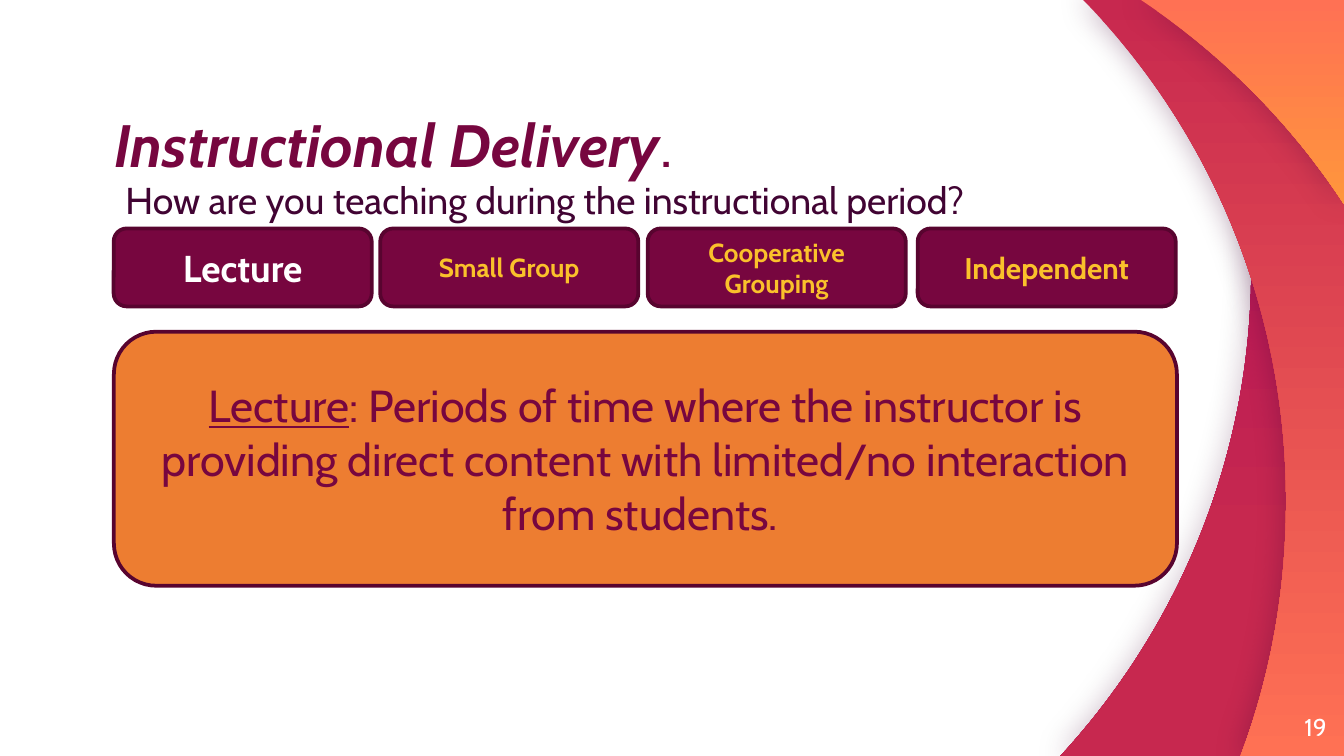
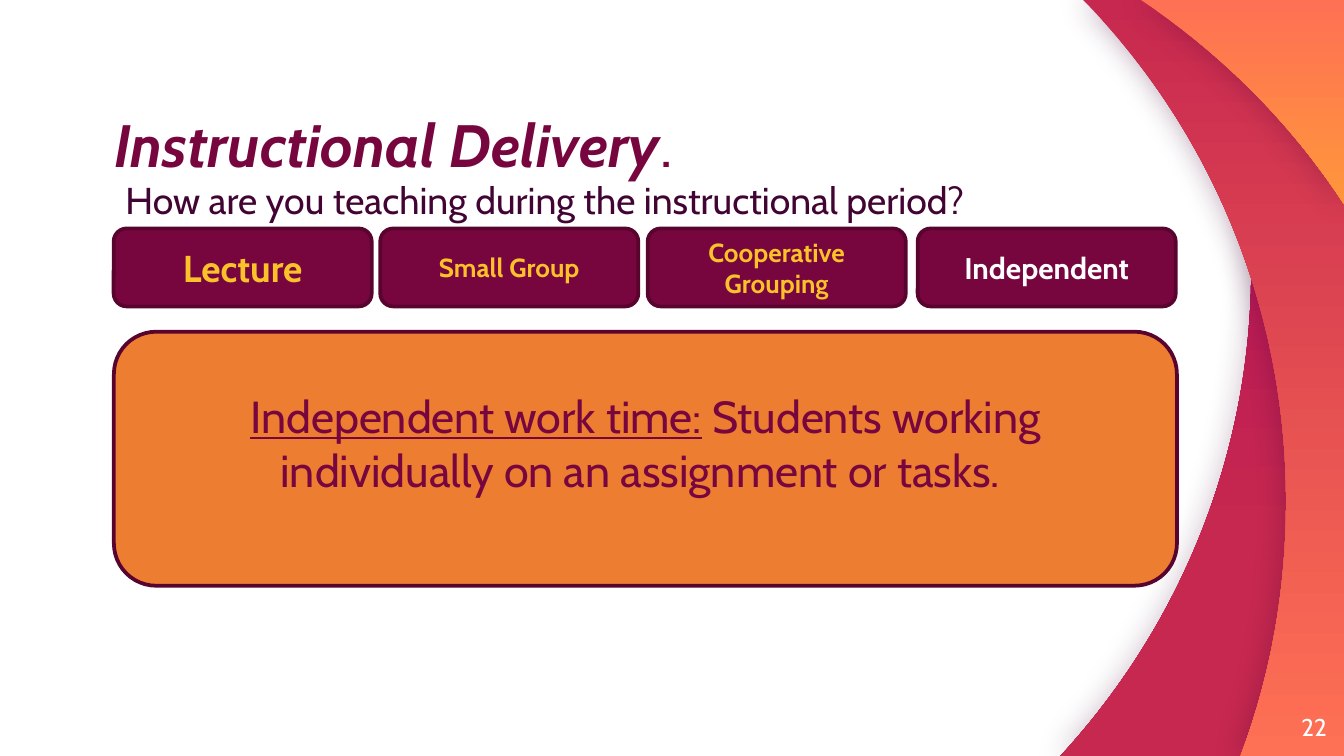
import lxml.etree
import pptx
import pptx.dml.color
import pptx.enum.shapes
import pptx.enum.text
import pptx.oxml.ns
import pptx.util

Pt = pptx.util.Pt
qn = pptx.oxml.ns.qn
ALIGN = pptx.enum.text.PP_ALIGN
ANCHOR = pptx.enum.text.MSO_ANCHOR

THEME = {
    "font": "Cabin",
    "wine": "77063F",
    "outline": "58042F",
    "ink": "410433",
    "gold": "FAC12B",
    "white": "FFFFFF",
    "orange": "ED7D31",
    "title_size": 32,
    "question_size": 20,
    "definition_size": 24,
    "number_size": 13,
    "outline_width": 2,
}

# Content
TITLE = ("Instructional Delivery", ". ")
QUESTION = "How are you teaching during the instructional period?"
# Each method: name, type size, left edge of its button
METHODS = [
    ("Lecture", 20, 60.9),
    ("Small Group", 14, 203.7),
    ("Cooperative Grouping", 14, 347),
    ("Independent", 16, 491.6),
]
PAGES = [
    {
        "number": "19",
        "active": "Lecture",
        "term": "Lecture",
        "meaning": ": Periods of time where the instructor is providing direct content "
                   "with limited/no interaction from students. ",
        "room_below": 3.6,
    },
    {
        "number": "22",
        "active": "Independent",
        "term": "Independent work time:",
        "meaning": " Students working individually on an assignment or tasks. ",
        "room_below": 20.6,
    },
]

# Layout, in points
WIDTH, HEIGHT = 720, 405
LEFT = 61.2
TEXT_WIDTH = 548
BUTTON_TOP, BUTTON_WIDTH, BUTTON_HEIGHT = 122.4, 138.24, 41.76
DEFINITION_AREA = (61, 177.7, 569.5, 136.08)

# Each band: start, curves (two control points and an end), gradient stops, shadow opacity
BANDS = [
    ((642.2, 0),
     [((661, 46), (670.3, 94.3), (670.3, 144)),
      ((670.3, 244.8), (631.5, 336.2), (568.1, HEIGHT))],
     [(0, "AC0C5C"), (0.72, "C7284F")], 25),
    ((580.3, 0),
     [((648, 69.1), (689, 164.2), (689, 268.6)),
      ((689, 315.4), (681.1, 361.4), (664.6, HEIGHT))],
     [(0, "C7284F"), (1, "FF7154")], 35),
    ((611.3, 0),
     [((654.5, 28.8), (691.9, 66.2), (WIDTH, 109.4))],
     [(0, "FF7154"), (1, "FF963C")], 30),
]


def colour(value):
    return pptx.dml.color.RGBColor.from_string(value)


def bend(shape, count):
    """Turn the first 3 * count straight segments of a freeform into cubic curves."""
    lines = list(shape._element.spPr.iter(qn("a:lnTo")))
    for first in range(0, 3 * count, 3):
        curve = lxml.etree.Element(qn("a:cubicBezTo"))
        lines[first].addprevious(curve)
        for line in lines[first:first + 3]:
            curve.append(line[0])
            line.getparent().remove(line)


def add_glow_shadow(shape, opacity):
    """Blurred shadow with no offset."""
    shape.shadow.inherit = False
    effects = shape._element.spPr.find(qn("a:effectLst"))
    shadow = lxml.etree.SubElement(effects, qn("a:outerShdw"), blurRad=str(Pt(16.9)),
                                   dist="0", dir="0", algn="ctr", rotWithShape="0")
    tint = lxml.etree.SubElement(shadow, qn("a:srgbClr"), val=THEME["ink"])
    lxml.etree.SubElement(tint, qn("a:alpha"), val=str(opacity * 1000))


def add_band(page, start, curves, stops, opacity):
    points = [point for curve in curves for point in curve]
    if points[-1][0] < WIDTH:
        points.append((WIDTH, HEIGHT))
    points.append((WIDTH, 0))
    builder = page.shapes.build_freeform(Pt(start[0]), Pt(start[1]))
    builder.add_line_segments([(Pt(x), Pt(y)) for x, y in points], close=True)
    band = builder.convert_to_shape()
    bend(band, len(curves))
    band.fill.gradient()
    band.fill.gradient_angle = 270
    for stop, (place, value) in zip(band.fill.gradient_stops, stops):
        stop.position = place
        stop.color.rgb = colour(value)
    band.line.fill.background()
    add_glow_shadow(band, opacity)


def write(shape, spans, frame_format, para_format):
    """Fill a shape with one paragraph; each span is text, size, colour, font format."""
    frame = shape.text_frame
    frame.word_wrap = True
    for name, value in frame_format.items():
        setattr(frame, name, value)
    para = frame.paragraphs[0]
    for name, value in para_format.items():
        setattr(para, name, value)
    for text, size, ink, font_format in spans:
        span = para.add_run()
        span.text = text
        span.font.color.rgb = colour(THEME[ink])
        for name, value in {"name": THEME["font"], "size": Pt(size), **font_format}.items():
            setattr(span.font, name, value)


def add_text(page, area, spans, anchor, para_format):
    box = page.shapes.add_textbox(*map(Pt, area))
    margins = {"margin_" + side: 0 for side in ("left", "top", "right", "bottom")}
    write(box, spans, {"vertical_anchor": anchor, **margins}, para_format)
    return box


def add_panel(page, area, fill, spans, room_below=3.6):
    panel = page.shapes.add_shape(
        pptx.enum.shapes.MSO_SHAPE.ROUNDED_RECTANGLE, *map(Pt, area))
    panel.shadow.inherit = False
    panel.fill.solid()
    panel.fill.fore_color.rgb = colour(THEME[fill])
    panel.line.color.rgb = colour(THEME["outline"])
    panel.line.width = Pt(THEME["outline_width"])
    write(panel, spans,
          {"vertical_anchor": ANCHOR.MIDDLE, "margin_bottom": Pt(room_below)},
          {"alignment": ALIGN.CENTER})


def add_frame(page, number):
    """Bands, title, question and page number, alike on every page."""
    for band in BANDS:
        add_band(page, *band)
    name, ending = TITLE
    size = THEME["title_size"]
    add_text(page, (LEFT, 66, TEXT_WIDTH, 30.96),
             [(name, size, "wine", {"bold": True, "italic": True}),
              (ending, size, "wine", {})],
             ANCHOR.BOTTOM, {"line_spacing": 0.9})
    question = add_text(page, (LEFT, 91.44, TEXT_WIDTH, 39.6),
                        [(QUESTION, THEME["question_size"], "ink", {})],
                        ANCHOR.TOP, {"line_spacing": 1.15})
    question.text_frame.margin_left = Pt(6)
    add_text(page, (667.6, 373.68, 43.2, 30.96),
             [(number, THEME["number_size"], "white", {})],
             ANCHOR.MIDDLE, {"alignment": ALIGN.RIGHT})


def add_page(deck, content):
    page = deck.slides.add_slide(deck.slide_layouts[6])
    add_frame(page, content["number"])
    for method, size, left in METHODS:
        ink = "white" if method == content["active"] else "gold"
        add_panel(page, (left, BUTTON_TOP, BUTTON_WIDTH, BUTTON_HEIGHT), "wine",
                  [(method, size, ink, {"bold": True})])
    size = THEME["definition_size"]
    add_panel(page, DEFINITION_AREA, "orange",
              [(content["term"], size, "wine", {"underline": True}),
               (content["meaning"], size, "wine", {})],
              content["room_below"])


def main():
    deck = pptx.Presentation()
    deck.slide_width, deck.slide_height = Pt(WIDTH), Pt(HEIGHT)
    for content in PAGES:
        add_page(deck, content)
    deck.save("out.pptx")


if __name__ == "__main__":
    main()
